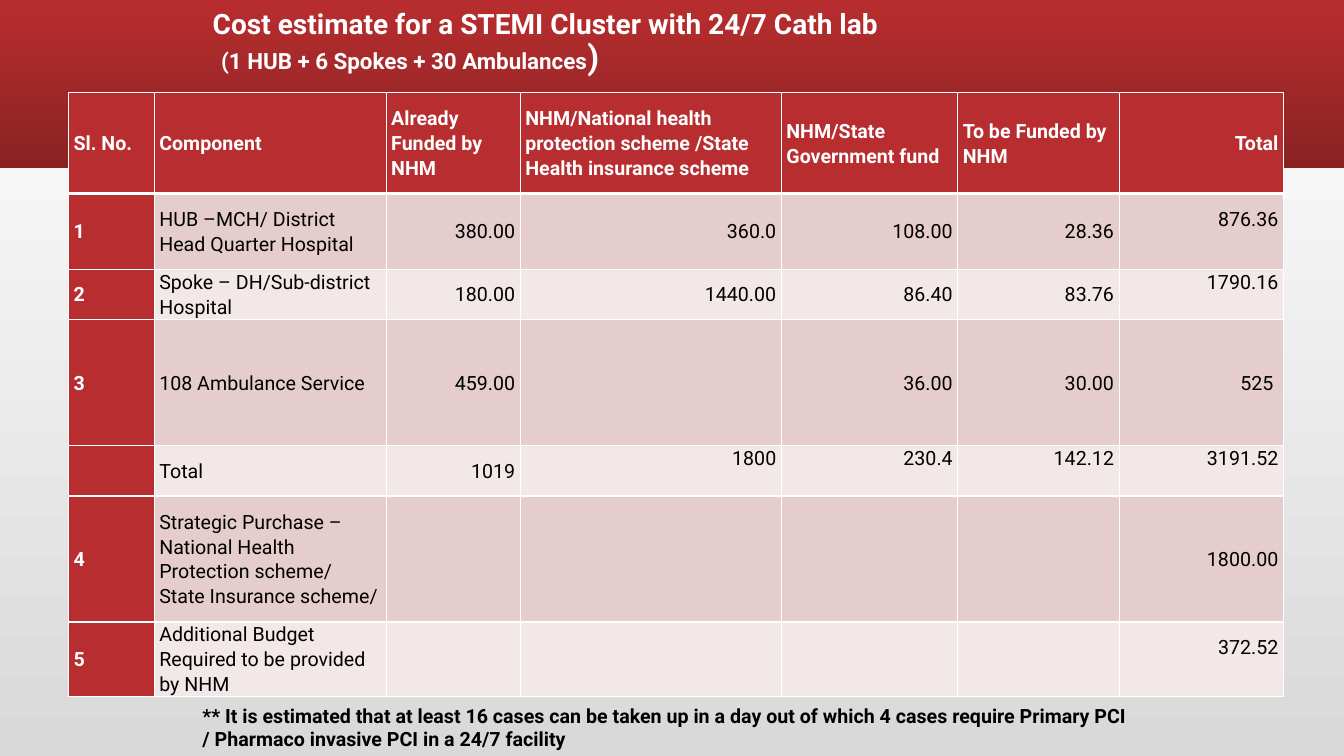
import pptx
import pptx.util
import pptx.dml.color
import pptx.enum.shapes
import pptx.enum.text
import pptx.oxml
import pptx.oxml.ns

Inches, Pt = pptx.util.Inches, pptx.util.Pt
ALIGN, ANCHOR = pptx.enum.text.PP_ALIGN, pptx.enum.text.MSO_ANCHOR
RED, WHITE, BLACK = "B82D2F", "FFFFFF", "000000"


def rgb(value):
    return pptx.dml.color.RGBColor.from_string(value)


def add_text(p, text, size=14, color=BLACK, bold=False):
    r = p.add_run()
    r.text = text
    r.font.name = "Roboto"
    r.font.size = Pt(size)
    r.font.bold = bold
    r.font.color.rgb = rgb(color)


prs = pptx.Presentation()
prs.slide_width, prs.slide_height = Inches(13.33), Inches(7.5)
s = prs.slides.add_slide(prs.slide_layouts[5])

# Background and red band, both shaded from top to bottom
band = s.shapes.add_shape(pptx.enum.shapes.MSO_SHAPE.RECTANGLE,
                          0, 0, Inches(13.33), Inches(1.67))
band.shadow.inherit = False
band.line.fill.background()
s.shapes._spTree.insert(2, band._element)
for fill, top, bottom in ((s.background.fill, WHITE, "D9D9D9"),
                          (band.fill, RED, "8A2223")):
    fill.gradient()
    fill.gradient_angle = 270
    for stop, color in zip(fill.gradient_stops, (top, bottom)):
        stop.color.rgb = rgb(color)

# Title
title = s.shapes.title
title.left, title.top = Inches(2.01), Inches(0)
title.width, title.height = Inches(9.09), Inches(0.87)
tf = title.text_frame
tf.word_wrap = True
tf.auto_size = pptx.enum.text.MSO_AUTO_SIZE.NONE
tf.vertical_anchor = ANCHOR.MIDDLE
p = tf.paragraphs[0]
p.alignment = ALIGN.LEFT
p.line_spacing = 0.9
add_text(p, "Cost estimate for a STEMI Cluster with 24/7 Cath lab", 20, WHITE, True)
p.add_line_break()
for text, size in ((" ", 24), ("(1 HUB + 6 Spokes + 30 Ambulances", 16), (")", 24)):
    add_text(p, text, size, WHITE, True)

# Cost table
rows = [
    ["Sl. No.", "Component", "Already Funded by NHM",
     "NHM/National health protection scheme /State Health insurance scheme",
     "NHM/State Government fund", "To be Funded by NHM", "Total"],
    ["1", "HUB –MCH/ District Head Quarter Hospital",
     "380.00", "360.0", "108.00", "28.36", "876.36"],
    ["2", "Spoke – DH/Sub-district Hospital",
     "180.00", "1440.00", "86.40", "83.76", "1790.16"],
    ["3", "108 Ambulance Service", "459.00", "", "36.00", "30.00", "525"],
    ["", "Total", "1019", "1800", "230.4", "142.12", "3191.52"],
    ["4", "Strategic Purchase – National Health Protection scheme/ "
     "State Insurance scheme/", "", "", "", "", "1800.00"],
    ["5", "Additional Budget Required to be provided by NHM",
     "", "", "", "", "372.52"],
]
col_widths = [0.85, 2.3, 1.33, 2.59, 1.75, 1.6, 1.63]
row_heights = [1, 0.75, 0.5, 1.25, 0.5, 1.25, 0.74]
raised = {(1, 6), (2, 6), (4, 3), (4, 4), (4, 5), (4, 6), (6, 6)}

table = s.shapes.add_table(len(rows), len(col_widths), Inches(0.68), Inches(0.92),
                           Inches(sum(col_widths)), Inches(sum(row_heights))).table
for col, width in zip(table.columns, col_widths):
    col.width = Inches(width)
for row, height in zip(table.rows, row_heights):
    row.height = Inches(height)

for i, values in enumerate(rows):
    for j, text in enumerate(values):
        cell = table.cell(i, j)
        heading = i == 0 or j == 0
        cell.fill.solid()
        cell.fill.fore_color.rgb = rgb(RED if heading else "E6CDCD" if i % 2 else "F3E8E8")
        cell.vertical_anchor = ANCHOR.MIDDLE
        cell.margin_left = Inches(0.05)
        cell.margin_right = Inches(0.1 if text == "525" else 0.05)
        cell.margin_top = 0
        cell.margin_bottom = Inches(0.25 if (i, j) in raised else 0)
        p = cell.text_frame.paragraphs[0]
        p.line_spacing = 1.07
        p.alignment = ALIGN.RIGHT if j == 6 or (i and j > 1) else ALIGN.LEFT
        if text:
            add_text(p, text, color=WHITE if heading else BLACK, bold=heading)

        # White borders, thicker under the header row
        tcPr = cell._tc.get_or_add_tcPr()
        for k, side in enumerate("LRTB"):
            thick = (i, side) in ((0, "B"), (1, "T"))
            tcPr.insert(k, pptx.oxml.parse_xml(
                f'<a:ln{side} {pptx.oxml.ns.nsdecls("a")} w="{Pt(3 if thick else 1)}">'
                f'<a:solidFill><a:srgbClr val="{WHITE}"/></a:solidFill></a:ln{side}>'))

# Footnote
note = s.shapes.add_textbox(Inches(1.91), Inches(6.93), Inches(9.4), Inches(0.57))
note.text_frame.word_wrap = True
add_text(note.text_frame.paragraphs[0],
         "** It is estimated that at least 16 cases can be taken up in a day out of which "
         "4 cases require Primary PCI / Pharmaco invasive PCI in a 24/7 facility", bold=True)

prs.save("out.pptx")
